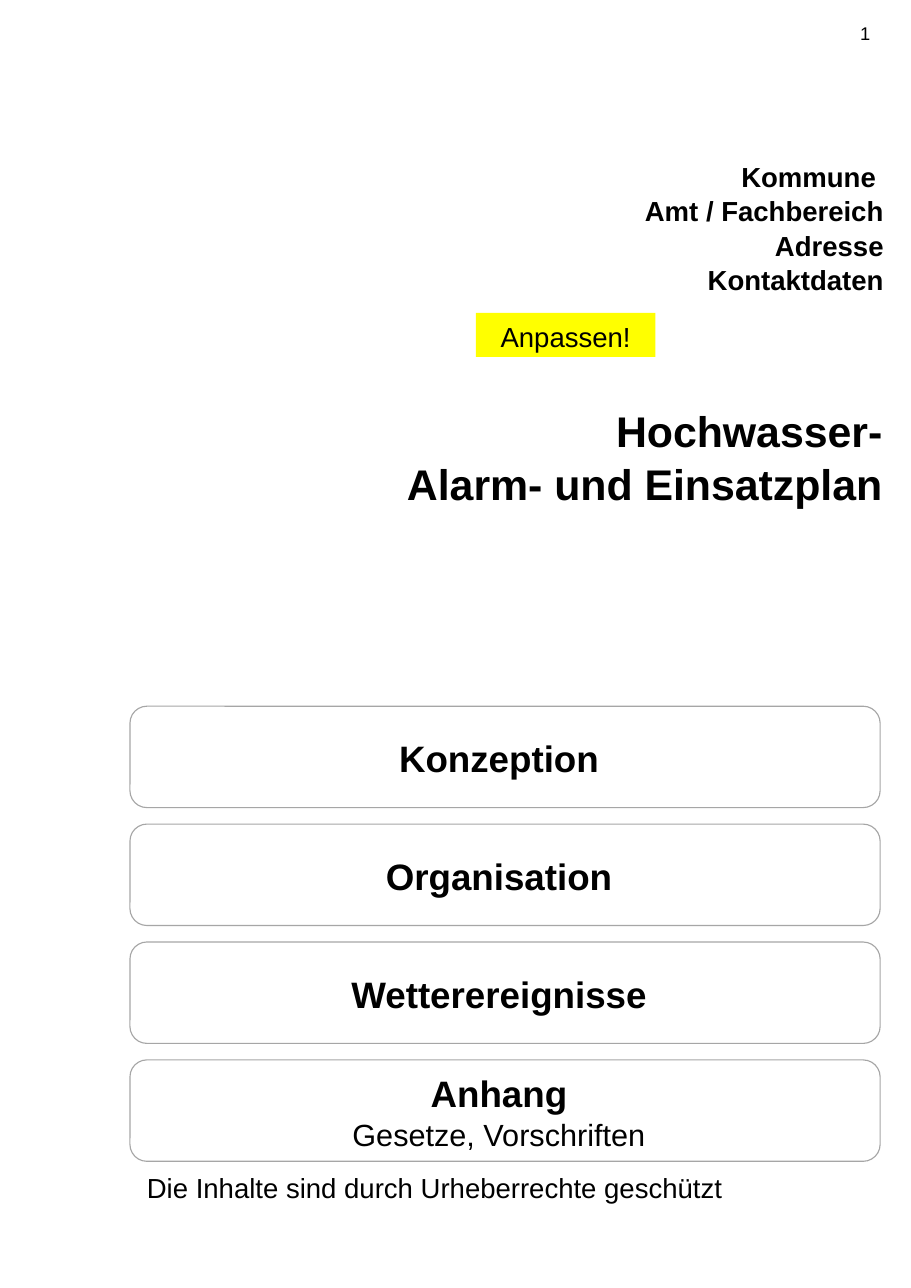
from pptx import Presentation
from pptx import util as u
from pptx.dml.color import RGBColor
from pptx.enum import shapes, text

COLORS = {"text": "000000", "paper": "FFFFFF", "border": "A6A6A6", "notice": "FFFF00"}
ALIGN = text.PP_ALIGN
ANCHOR = text.MSO_ANCHOR


class CoverPage:
    """Holds the text style and the slide, and adds each kind of element."""

    font_name = "Arial"
    line_spacing = 1.04

    def __init__(self, presentation):
        self.slide = presentation.slides.add_slide(presentation.slide_layouts[5])

    def color(self, name):
        return RGBColor.from_string(COLORS[name])

    def place(self, shape, box):
        shape.left, shape.top, shape.width, shape.height = map(u.Inches, box)

    def set_text(self, shape, lines, align, anchor=ANCHOR.TOP, left=0.1, right=0.1):
        frame = shape.text_frame
        frame.word_wrap = True
        frame.auto_size = text.MSO_AUTO_SIZE.NONE
        frame.vertical_anchor = anchor
        frame.margin_left, frame.margin_right = u.Inches(left), u.Inches(right)
        frame.margin_top = frame.margin_bottom = u.Inches(0.05)
        frame.text = "\n".join(line for line, size, bold in lines)
        for paragraph, (line, size, bold) in zip(frame.paragraphs, lines):
            paragraph.alignment = align
            paragraph.line_spacing = self.line_spacing
            paragraph.space_before = u.Pt(0)
            paragraph.font.name = self.font_name
            paragraph.font.size = u.Pt(size)
            paragraph.font.bold = bold
            paragraph.font.color.rgb = self.color("text")

    def title(self, box, lines):
        shape = self.slide.shapes.title
        self.place(shape, box)
        self.set_text(shape, [(line, 28, True) for line in lines], ALIGN.RIGHT)

    def label(self, box, lines, align, size=18, bold=False):
        shape = self.slide.shapes.add_textbox(*map(u.Inches, box))
        self.set_text(shape, [(line, size, bold) for line in lines], align)
        return shape

    def notice(self, box, line):
        shape = self.label(box, [line], ALIGN.CENTER)
        shape.fill.solid()
        shape.fill.fore_color.rgb = self.color("notice")

    def chapter(self, box, heading, subtitle=None):
        shape = self.slide.shapes.add_shape(
            shapes.MSO_SHAPE.ROUNDED_RECTANGLE, *map(u.Inches, box))
        shape.shadow.inherit = False
        shape.fill.solid()
        shape.fill.fore_color.rgb = self.color("paper")
        shape.line.color.rgb = self.color("border")
        shape.line.width = u.Pt(0.75)
        lines = [(heading, 24, True)]
        if subtitle:
            lines.append((subtitle, 20, False))
        self.set_text(shape, lines, ALIGN.CENTER, ANCHOR.MIDDLE, left=0, right=0.11)


def main():
    presentation = Presentation()
    presentation.slide_width = u.Inches(8.27)
    presentation.slide_height = u.Inches(11.69)
    page = CoverPage(presentation)

    page.label((6.58, 0.14, 1.42, 0.31), ["1"], ALIGN.RIGHT, size=12)
    page.title((0.75, 3.6, 7.36, 1.51), ["Hochwasser-", "Alarm- und Einsatzplan"])
    page.label((1.44, 1.39, 6.68, 1.31),
               ["Kommune ", "Amt / Fachbereich", "Adresse", "Kontaktdaten"],
               ALIGN.RIGHT, bold=True)
    page.notice((4.32, 2.84, 1.63, 0.4), "Anpassen!")

    chapters = [("Konzeption",), ("Organisation",), ("Wetterereignisse",),
                ("Anhang", "Gesetze, Vorschriften")]
    for index, chapter in enumerate(chapters):
        page.chapter((1.18, 6.41 + 1.07 * index, 6.81, 0.92), *chapter)

    page.label((0.94, 10.57, 6.08, 0.4),
               ["Die Inhalte sind durch Urheberrechte geschützt "], ALIGN.CENTER)
    presentation.save("out.pptx")


if __name__ == "__main__":
    main()
